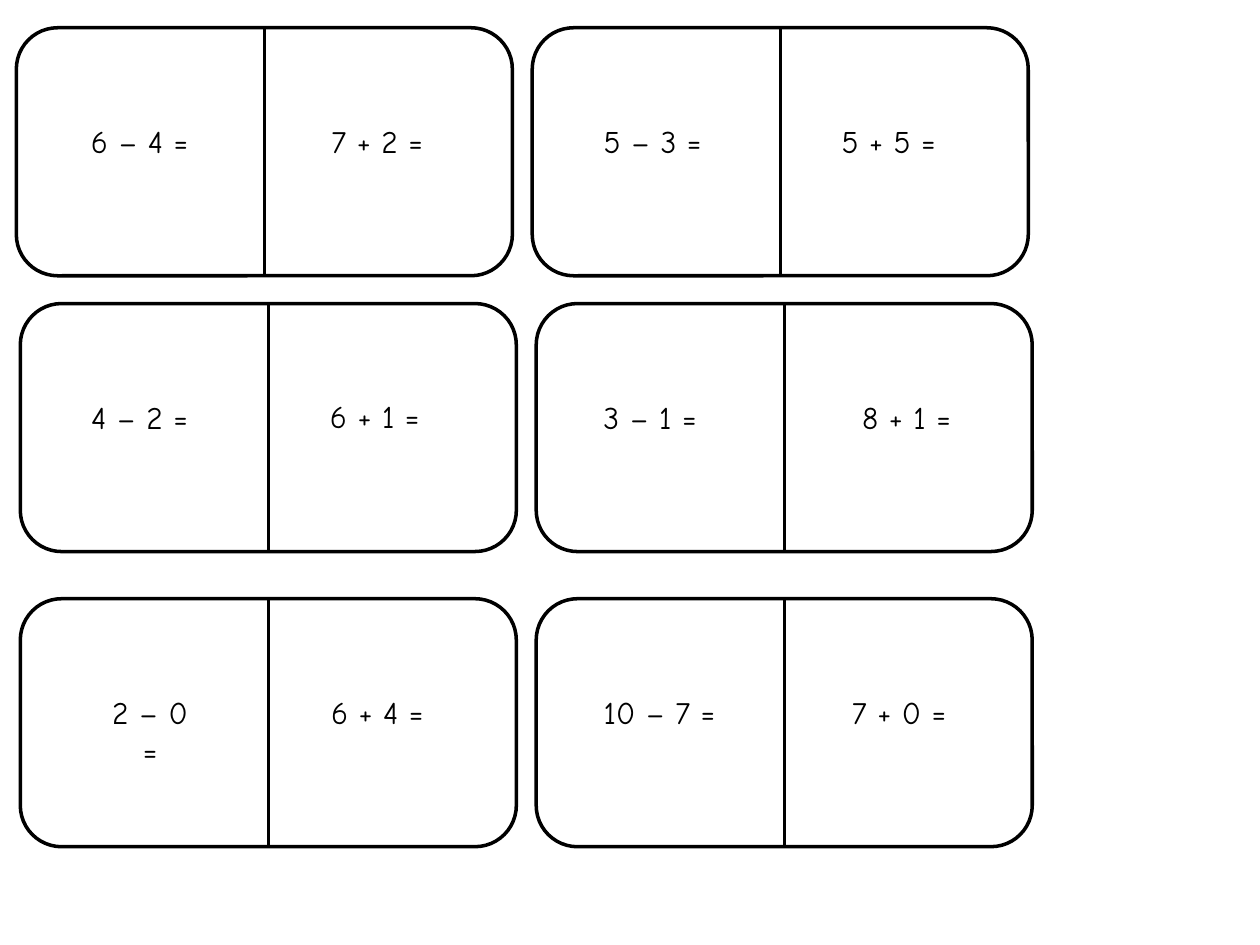
"""Build a slide of six domino cards with sums to solve."""
from dataclasses import dataclass

from lxml.etree import SubElement
from pptx import Presentation
from pptx.dml.color import RGBColor
from pptx.enum.shapes import MSO_CONNECTOR, MSO_SHAPE
from pptx.enum.text import MSO_AUTO_SIZE, PP_ALIGN
from pptx.oxml.ns import qn
from pptx.util import Cm, Pt


@dataclass(frozen=True)
class Theme:
    ink: RGBColor = RGBColor(0, 0, 0)
    font: str = "Comic Neue"
    size: Pt = Pt(18)
    line: Pt = Pt(2)


theme = Theme()
wide, high, step = 10, 5, 10.4
rows = [(0.33, 0.56), (0.41, 6.12), (0.41, 12.07)]
sums = [
    ("6 – 4 =", 1.57, 2.34, 2.49, False),
    ("7 + 2 =", 6.35, 2.34, 2.51, False),
    ("5 – 3 =", 11.91, 2.34, 2.49, False),
    ("5 + 5 =", 16.66, 2.34, 2.51, False),
    ("4 – 2 =", 1.57, 7.9, 2.49, False),
    ("6 + 1 =", 6.35, 7.87, 2.41, False),
    ("3 – 1 =", 11.91, 7.9, 2.39, True),
    ("8 + 1 =", 17.07, 7.9, 2.41, False),
    ("2 – 0 =", 1.83, 13.84, 2.39, True),
    ("6 + 4 =", 6.35, 13.84, 2.51, False),
    ("10 – 7 =", 11.91, 13.84, 2.77, False),
    ("7 + 0 =", 16.87, 13.84, 2.51, False),
]

deck = Presentation()
deck.slide_width, deck.slide_height = Cm(25.4), Cm(19.05)
slide = deck.slides.add_slide(deck.slide_layouts[6])

for start, top in rows:
    for col in range(2):
        left = start + col * step
        mid = left + wide / 2
        group = slide.shapes.add_group_shape()
        card = group.shapes.add_shape(
            MSO_SHAPE.ROUNDED_RECTANGLE, Cm(left), Cm(top), Cm(wide), Cm(high))
        card.shadow.inherit = False
        card.fill.background()
        split = group.shapes.add_connector(
            MSO_CONNECTOR.STRAIGHT, Cm(mid), Cm(top), Cm(mid), Cm(top + high))
        SubElement(split._element.spPr, qn("a:effectLst"))
        for part in (card, split):
            part.line.color.rgb = theme.ink
            part.line.width = theme.line

for text, left, top, width, wrap in sums:
    box = slide.shapes.add_textbox(Cm(left), Cm(top), Cm(width), Cm(1.02))
    frame = box.text_frame
    frame.text = text
    frame.word_wrap = wrap
    frame.auto_size = MSO_AUTO_SIZE.SHAPE_TO_FIT_TEXT
    para = frame.paragraphs[0]
    para.alignment = PP_ALIGN.CENTER
    font = para.runs[0].font
    font.name, font.size = theme.font, theme.size
    font.color.rgb = theme.ink

deck.save("out.pptx")
